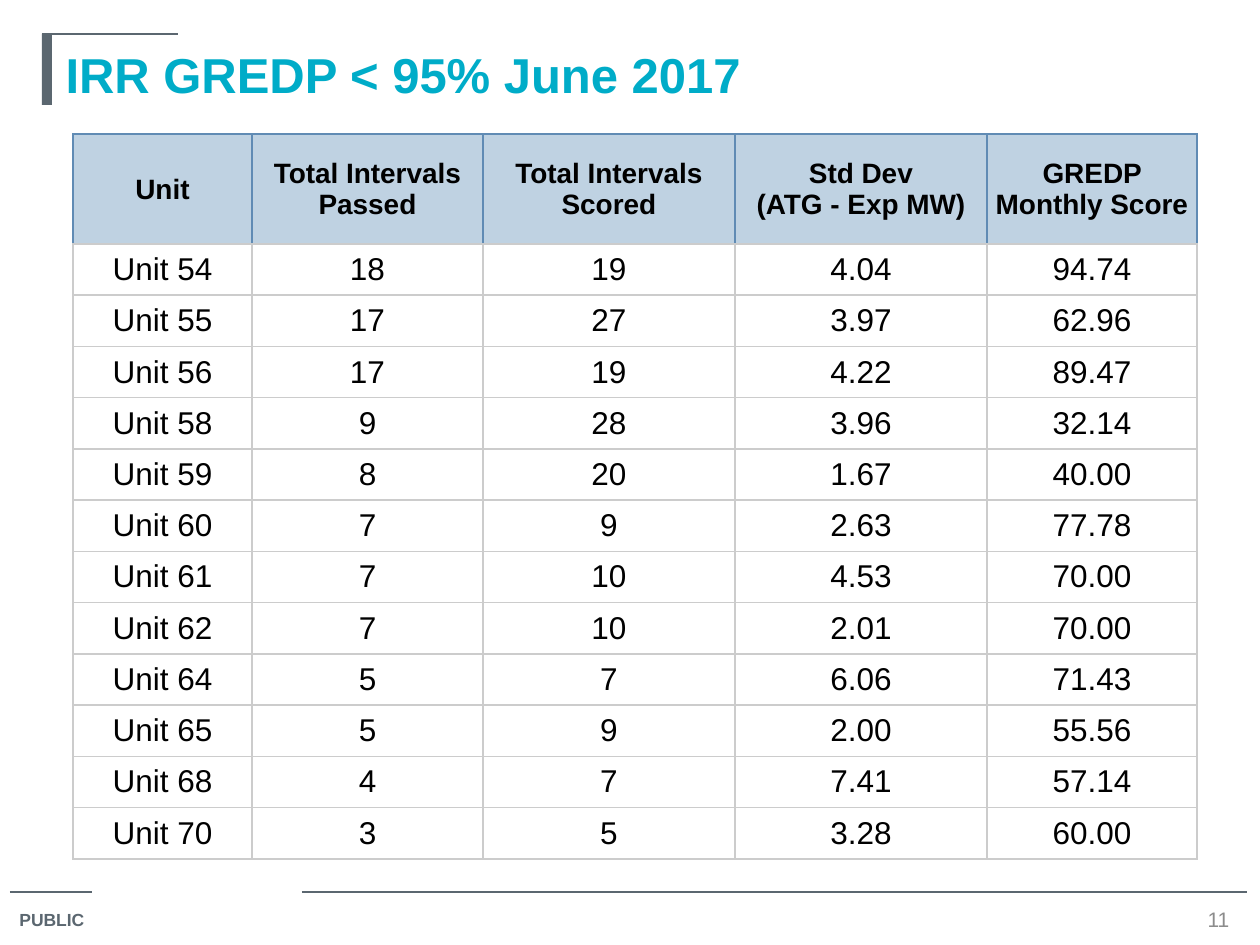
from dataclasses import dataclass
from pptx import Presentation
from pptx.dml.color import RGBColor
from pptx.enum.shapes import MSO_CONNECTOR, MSO_SHAPE
from pptx.enum.text import MSO_ANCHOR, PP_ALIGN
from pptx.oxml.ns import qn
from pptx.util import Pt
from lxml.etree import SubElement

PX = 914400 / 126


@dataclass(frozen=True)
class Theme:
    font: str = "Arial"
    accent: str = "00ACC8"
    slate: str = "5B6770"
    gray: str = "8C8C8C"
    black: str = "000000"
    head_fill: str = "BFD2E2"
    head_border: str = "608BB4"
    border: str = "CCCCCC"
    title_size: int = 28
    body_size: int = 18
    head_size: int = 16
    number_size: int = 12
    label_size: int = 10


HEADERS = ["Unit", "Total Intervals Passed", "Total Intervals Scored",
           "Std Dev\n(ATG - Exp MW)", "GREDP Monthly Score"]
SCORES = [
    ("Unit 54", "18", "19", "4.04", "94.74"),
    ("Unit 55", "17", "27", "3.97", "62.96"),
    ("Unit 56", "17", "19", "4.22", "89.47"),
    ("Unit 58", "9", "28", "3.96", "32.14"),
    ("Unit 59", "8", "20", "1.67", "40.00"),
    ("Unit 60", "7", "9", "2.63", "77.78"),
    ("Unit 61", "7", "10", "4.53", "70.00"),
    ("Unit 62", "7", "10", "2.01", "70.00"),
    ("Unit 64", "5", "7", "6.06", "71.43"),
    ("Unit 65", "5", "9", "2.00", "55.56"),
    ("Unit 68", "4", "7", "7.41", "57.14"),
    ("Unit 70", "3", "5", "3.28", "60.00"),
]


def emu(*lengths):
    return [round(n * PX) for n in lengths]


def rgb(color):
    return RGBColor.from_string(color)


def write(tf, text, *, font, size, color, bold=False, align=PP_ALIGN.LEFT):
    for i, line in enumerate(text.split("\n")):
        p = tf.paragraphs[0] if i == 0 else tf.add_paragraph()
        p.alignment = align
        r = p.add_run()
        r.text = line
        r.font.name = font
        r.font.size = Pt(size)
        r.font.bold = bold
        r.font.color.rgb = rgb(color)


def set_border(cell, side, color):
    ln = SubElement(cell._tc.get_or_add_tcPr(), qn(f"a:ln{side}"), w=str(Pt(1)))
    fill = SubElement(ln, qn("a:solidFill"))
    SubElement(fill, qn("a:srgbClr"), val=color)


class SlideBuilder:
    def __init__(self, slide, theme):
        self.s = slide
        self.theme = theme

    def title(self, text, x, y, w, h):
        sp = self.s.shapes.title
        sp.left, sp.top, sp.width, sp.height = emu(x, y, w, h)
        tf = sp.text_frame
        tf.word_wrap = True
        tf.vertical_anchor = MSO_ANCHOR.TOP
        tf.margin_top = emu(10)[0]
        write(tf, text, font=self.theme.font, size=self.theme.title_size,
              color=self.theme.accent, bold=True)

    def text(self, text, x, y, w, h, anchor=MSO_ANCHOR.TOP, **fmt):
        tf = self.s.shapes.add_textbox(*emu(x, y, w, h)).text_frame
        tf.word_wrap = True
        tf.vertical_anchor = anchor
        write(tf, text, font=self.theme.font, **fmt)

    def rule(self, x1, x2, y):
        line = self.s.shapes.add_connector(MSO_CONNECTOR.STRAIGHT, *emu(x1, y, x2, y))
        line.line.color.rgb = rgb(self.theme.slate)
        line.line.width = Pt(0.75)
        SubElement(line._element.spPr, qn("a:effectLst"))

    def bar(self, x, y, w, h):
        sp = self.s.shapes.add_shape(MSO_SHAPE.RECTANGLE, *emu(x, y, w, h))
        sp.shadow.inherit = False
        sp.fill.solid()
        sp.fill.fore_color.rgb = rgb(self.theme.slate)
        sp.line.fill.background()

    def cell(self, cell, text, is_head):
        t = self.theme
        cell.vertical_anchor = MSO_ANCHOR.MIDDLE
        cell.margin_left = cell.margin_right = cell.margin_top = emu(int(is_head))[0]
        cell.margin_bottom = 0
        for side in "LRTB":
            blue = is_head and side != "B"
            set_border(cell, side, t.head_border if blue else t.border)
        if is_head:
            cell.fill.solid()
            cell.fill.fore_color.rgb = rgb(t.head_fill)
        else:
            cell.fill.background()
        write(cell.text_frame, text, font=t.font, color=t.black, bold=is_head,
              size=t.head_size if is_head else t.body_size, align=PP_ALIGN.CENTER)

    def table(self, headers, rows, x, y, widths, head_h, body_h):
        data = [headers, *rows]
        frame = self.s.shapes.add_table(len(data), len(headers),
                                        *emu(x, y, sum(widths), head_h + body_h))
        tbl = frame.table
        tbl.horz_banding = False
        for col, w in zip(tbl.columns, emu(*widths)):
            col.width = w
        for i, values in enumerate(data):
            tbl.rows[i].height = emu(head_h if i == 0 else body_h / len(rows))[0]
            for j, value in enumerate(values):
                self.cell(tbl.cell(i, j), value, i == 0)


def main():
    prs = Presentation()
    prs.slide_width, prs.slide_height = emu(1260, 945)
    theme = Theme()
    b = SlideBuilder(prs.slides.add_slide(prs.slide_layouts[5]), theme)
    b.rule(10, 92, 892)
    b.rule(302, 1247, 892)
    b.text("PUBLIC", 7, 903, 97, 35, size=theme.label_size, color=theme.slate, bold=True)
    b.bar(42, 34, 10, 71)
    b.rule(42, 178, 34)
    b.title("IRR GREDP < 95% June 2017", 53, 34, 1166, 98)
    b.table(HEADERS, SCORES, 73, 134, [179, 231, 252, 252, 210], 110, 615)
    b.text("11", 1187, 905, 63, 29, anchor=MSO_ANCHOR.MIDDLE, size=theme.number_size,
           color=theme.gray, align=PP_ALIGN.CENTER)
    prs.save("out.pptx")


if __name__ == "__main__":
    main()
